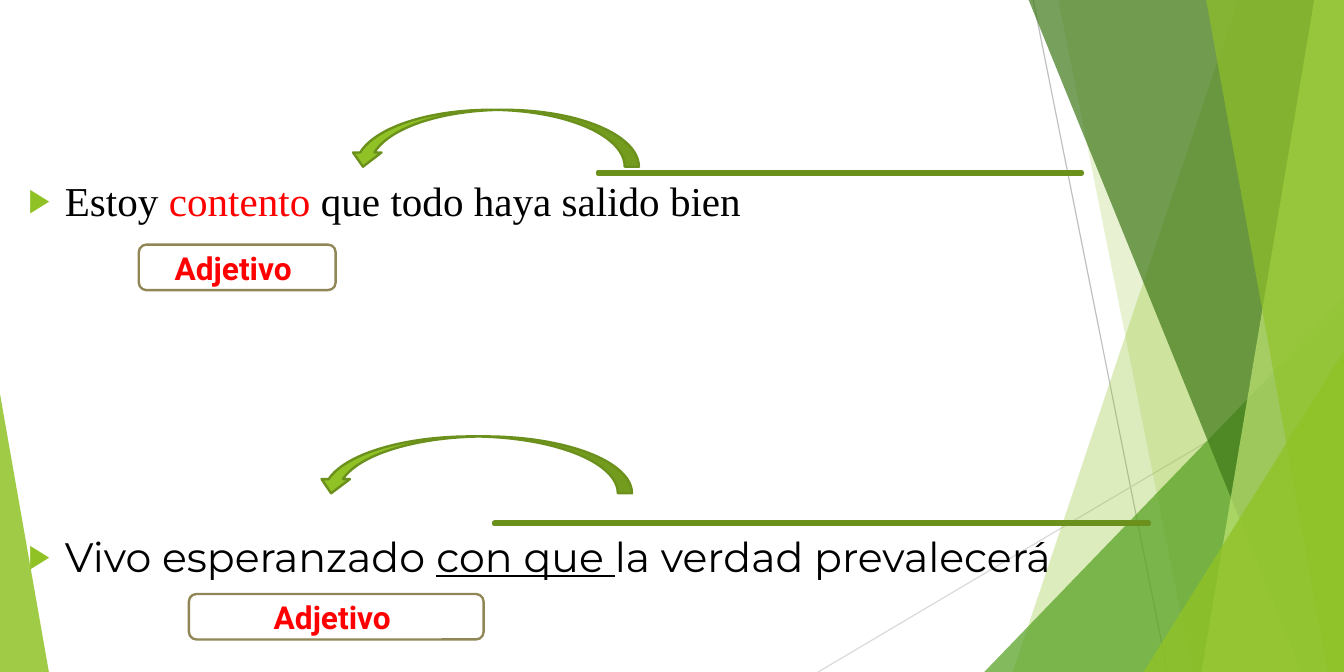
from dataclasses import dataclass

from lxml import etree
from pptx import Presentation
from pptx.dml.color import RGBColor
from pptx.enum.shapes import MSO_CONNECTOR, MSO_SHAPE
from pptx.enum.text import MSO_ANCHOR, PP_ALIGN
from pptx.oxml.ns import qn
from pptx.util import Cm, Inches, Pt

TRIANGLE = MSO_SHAPE.ISOSCELES_TRIANGLE
MINUS = MSO_SHAPE.MATH_MINUS
CURVED_ARROW = MSO_SHAPE.CURVED_LEFT_ARROW
ROUNDED = MSO_SHAPE.ROUNDED_RECTANGLE
STRAIGHT = MSO_CONNECTOR.STRAIGHT
CENTER = PP_ALIGN.CENTER
MIDDLE = MSO_ANCHOR.MIDDLE

LIME = RGBColor(0x90, 0xC2, 0x26)
PALE_LIME = RGBColor(0xC0, 0xE4, 0x74)
GREEN = RGBColor(0x54, 0xA0, 0x21)
DARK_GREEN = RGBColor(0x3F, 0x78, 0x19)
OLIVE = RGBColor(0x6B, 0x90, 0x1C)
KHAKI = RGBColor(0x91, 0x86, 0x55)
GRAY = RGBColor(0xBF, 0xBF, 0xBF)
LIGHT_GRAY = RGBColor(0xD9, 0xD9, 0xD9)
RED = RGBColor(0xFF, 0, 0)
BLACK = RGBColor(0, 0, 0)
WHITE = RGBColor(0xFF, 0xFF, 0xFF)

# The slide measures 30 by 15 cm
SLIDE_WIDTH, SLIDE_HEIGHT = Cm(30), Cm(15)
WIDTH, HEIGHT = SLIDE_WIDTH.inches, SLIDE_HEIGHT.inches


@dataclass
class Ray:
    start: tuple[float, float]
    end: tuple[float, float]
    color: RGBColor


@dataclass
class Band:
    """Area from a slanted left edge to the right side of the slide."""
    top_x: float
    bottom_x: float
    color: RGBColor
    opacity: int


@dataclass
class Wedge:
    """Triangle standing on the bottom of the slide."""
    left: float
    top: float
    width: float
    apex: float
    color: RGBColor
    opacity: int


@dataclass
class Piece:
    text: str
    color: RGBColor = BLACK
    underline: bool = False


@dataclass
class Sentence:
    pieces: list[Piece]
    font: str
    space_before: float
    clause_line: tuple[float, float, float]  # left, top, width
    arrow: tuple[float, float, float]  # left, top, length before rotation
    label: tuple[float, float, float]  # left, top, width


RAYS = [
    Ray((9.08, 0), (10.26, HEIGHT), GRAY),
    Ray((WIDTH, 3.17), (7.19, HEIGHT), LIGHT_GRAY),
]
FACETS = [
    Band(10.88, 8.9, LIME, 30),
    Band(9.3, 10.48, LIME, 20),
    Wedge(8.65, 2.63, 3.16, 1, GREEN, 72),
    Band(9.04, 11.44, DARK_GREEN, 70),
    Band(11.55, 10.56, PALE_LIME, 70),
    Band(10.6, 11.67, LIME, 65),
    Wedge(10.05, 3.09, 1.76, 1, LIME, 80),
    Wedge(0, 3.46, 0.43, 0, LIME, 85),
]
SENTENCES = [
    Sentence(
        [Piece("Estoy "), Piece("contento", RED), Piece(" que todo haya salido bien")],
        "Times New Roman", 4.5, (4.49, 1.5, 5.78), (4.09, -0.06, 2.55), (1.22, 2.15, 1.73)),
    Sentence(
        [Piece("Vivo esperanzado "), Piece("con que ", underline=True),
         Piece("la verdad prevalecerá")],
        "Montserrat", 194, (3.31, 4.58, 7.82), (3.92, 2.7, 2.77), (1.66, 5.22, 2.59)),
]


def add_ray(shapes, ray: Ray) -> None:
    line = shapes.add_connector(STRAIGHT, *map(Inches, ray.start + ray.end))
    line.line.color.rgb = ray.color
    line.line.width = Pt(0.75)
    etree.SubElement(line._element.spPr, qn("a:effectLst"))


def add_facet(shapes, facet: Band | Wedge) -> None:
    if isinstance(facet, Band):
        builder = shapes.build_freeform(Inches(facet.top_x), 0)
        corners = [(WIDTH, 0), (WIDTH, HEIGHT), (facet.bottom_x, HEIGHT)]
        builder.add_line_segments([(Inches(x), Inches(y)) for x, y in corners])
        surface = builder.convert_to_shape()
    else:
        surface = shapes.add_shape(
            TRIANGLE, Inches(facet.left), Inches(facet.top),
            Inches(facet.width), Inches(HEIGHT - facet.top))
        surface.adjustments[0] = facet.apex
    surface.shadow.inherit = False
    surface.fill.solid()
    surface.fill.fore_color.rgb = facet.color
    surface.line.fill.background()
    color = surface._element.spPr.find(".//" + qn("a:srgbClr"))
    etree.SubElement(color, qn("a:alpha"), val=str(facet.opacity * 1000))


def add_preset(shapes, kind, box: tuple[float, float, float, float],
               fill: RGBColor, outline: RGBColor, weight: float):
    preset = shapes.add_shape(kind, *map(Inches, box))
    preset.shadow.inherit = False
    preset.fill.solid()
    preset.fill.fore_color.rgb = fill
    preset.line.color.rgb = outline
    preset.line.width = Pt(weight)
    return preset


def write_sentence(paragraph, sentence: Sentence) -> None:
    paragraph.space_before = Pt(sentence.space_before)
    for piece in sentence.pieces:
        run = paragraph.add_run()
        run.text = piece.text
        run.font.name = sentence.font
        run.font.size = Pt(26)
        run.font.color.rgb = piece.color
        run.font.underline = piece.underline
    # Green triangular bullet with hanging indent
    properties = paragraph._p.get_or_add_pPr()
    properties.set("marL", str(Inches(0.32)))
    properties.set("indent", str(-Inches(0.32)))
    bullet_color = etree.SubElement(properties, qn("a:buClr"))
    etree.SubElement(bullet_color, qn("a:srgbClr"), val=str(LIME))
    etree.SubElement(properties, qn("a:buSzPct"), val="80000")
    etree.SubElement(properties, qn("a:buFont"), typeface="Arial")
    etree.SubElement(properties, qn("a:buChar"), char="▶")


def add_marks(shapes, sentence: Sentence) -> None:
    add_preset(shapes, MINUS, (*sentence.clause_line, 0.04), LIME, OLIVE, 3)
    left, top, length = sentence.arrow
    arrow = add_preset(shapes, CURVED_ARROW, (left, top, 0.5, length), LIME, OLIVE, 1.5)
    arrow.rotation = 90
    arrow._element.spPr.find(qn("a:xfrm")).set("flipH", "1")


def add_label(shapes, sentence: Sentence) -> None:
    label = add_preset(shapes, ROUNDED, (*sentence.label, 0.4), WHITE, KHAKI, 1.5)
    frame = label.text_frame
    frame.text = "Adjetivo "
    frame.vertical_anchor = MIDDLE
    frame.margin_left = frame.margin_right = Inches(0.09)
    frame.margin_top = frame.margin_bottom = Inches(0.04)
    frame.paragraphs[0].alignment = CENTER
    font = frame.paragraphs[0].runs[0].font
    font.name, font.size, font.bold = "Roboto", Pt(20), True
    font.color.rgb = RED


def main() -> None:
    deck = Presentation()
    deck.slide_width, deck.slide_height = SLIDE_WIDTH, SLIDE_HEIGHT
    shapes = deck.slides.add_slide(deck.slide_layouts[6]).shapes

    # Faceted background
    for ray in RAYS:
        add_ray(shapes, ray)
    for facet in FACETS:
        add_facet(shapes, facet)

    # Example sentences
    examples = shapes.add_textbox(*map(Inches, (0.16, 1.5, 11.21, 3.85))).text_frame
    examples.word_wrap = True
    examples.margin_left = examples.margin_right = Inches(0.09)
    examples.margin_top = examples.margin_bottom = Inches(0.04)
    for index, sentence in enumerate(SENTENCES):
        paragraph = examples.add_paragraph() if index else examples.paragraphs[0]
        write_sentence(paragraph, sentence)

    # Clause lines and arrows, then word-class labels
    for sentence in SENTENCES:
        add_marks(shapes, sentence)
    for sentence in SENTENCES:
        add_label(shapes, sentence)

    deck.save("out.pptx")


if __name__ == "__main__":
    main()
